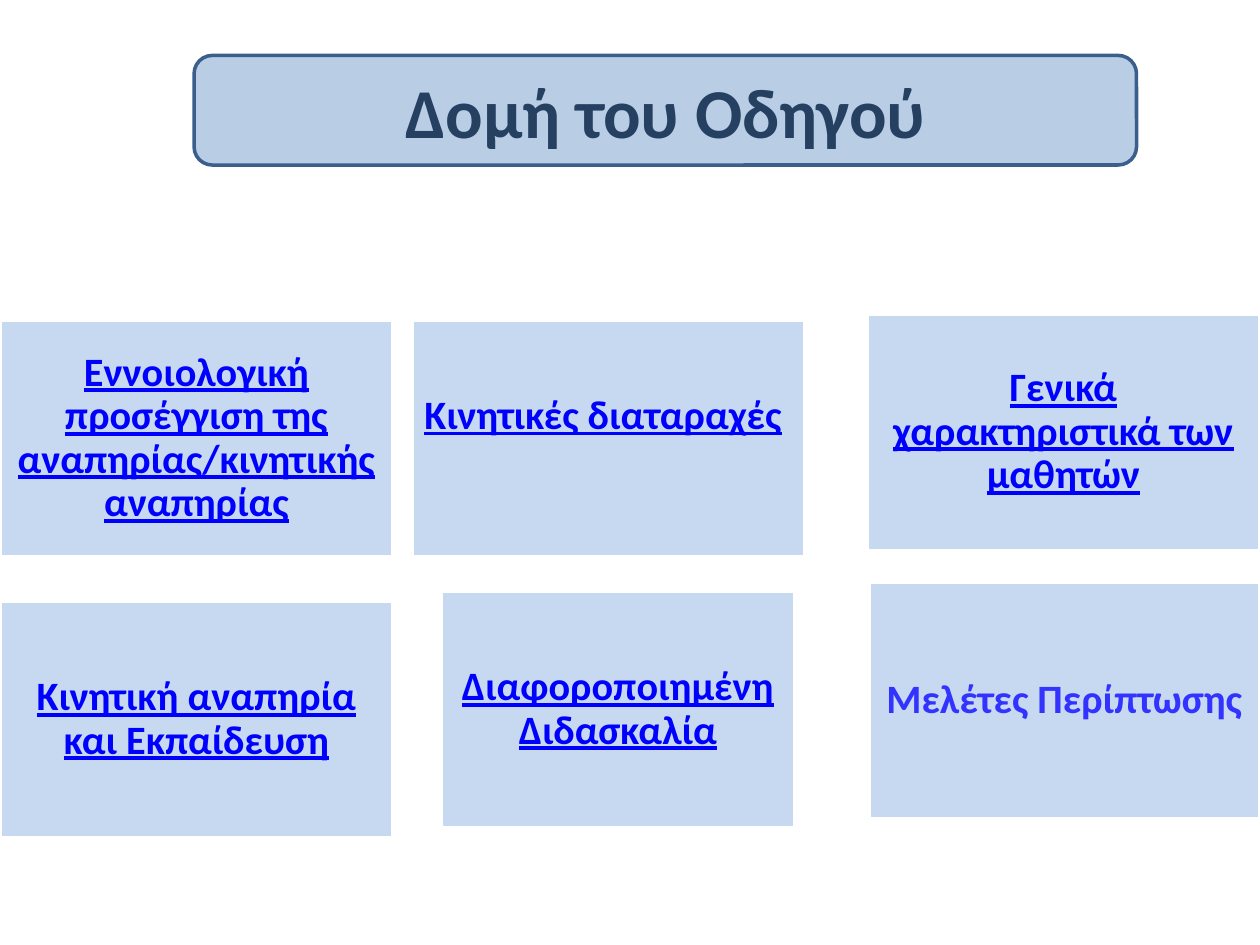
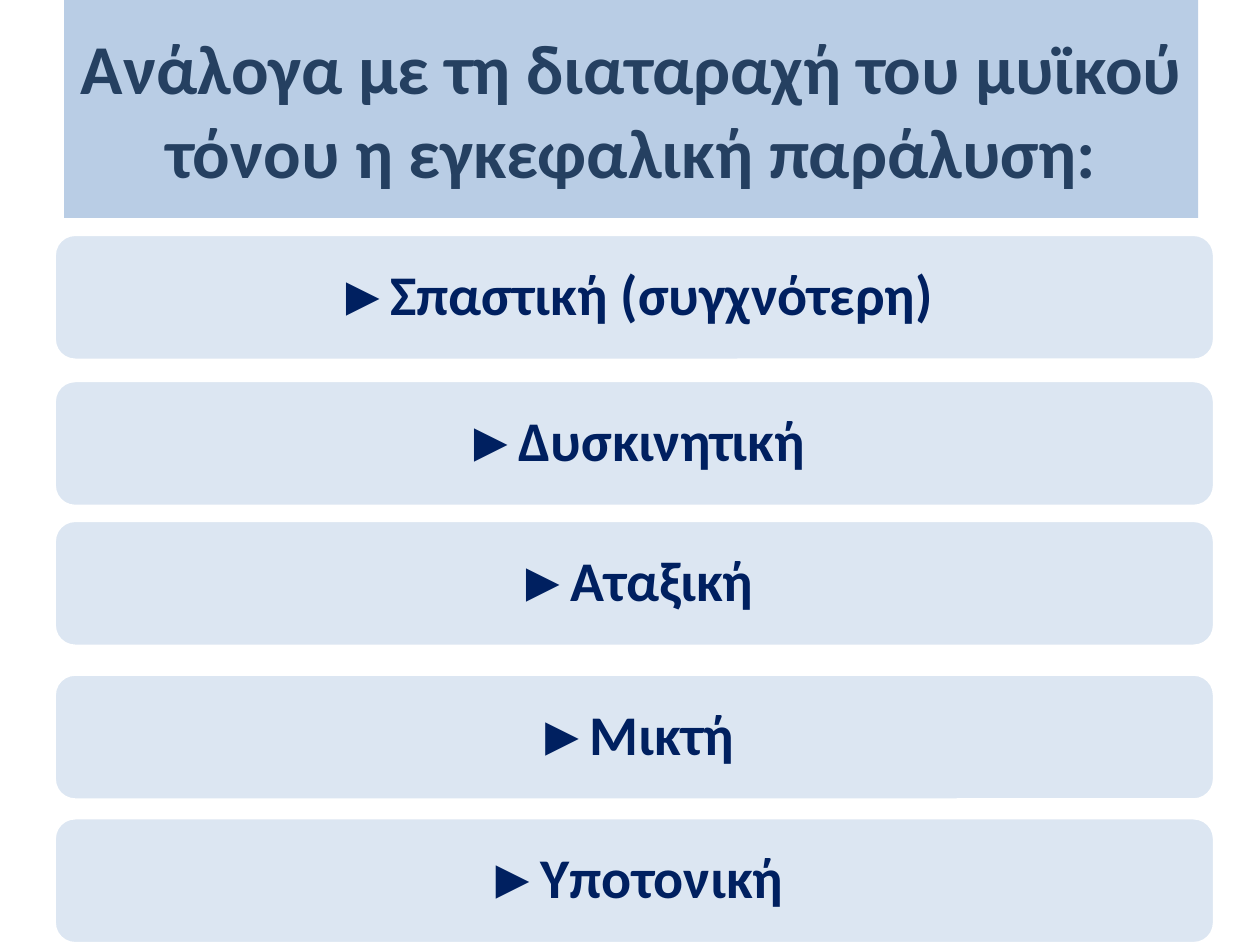
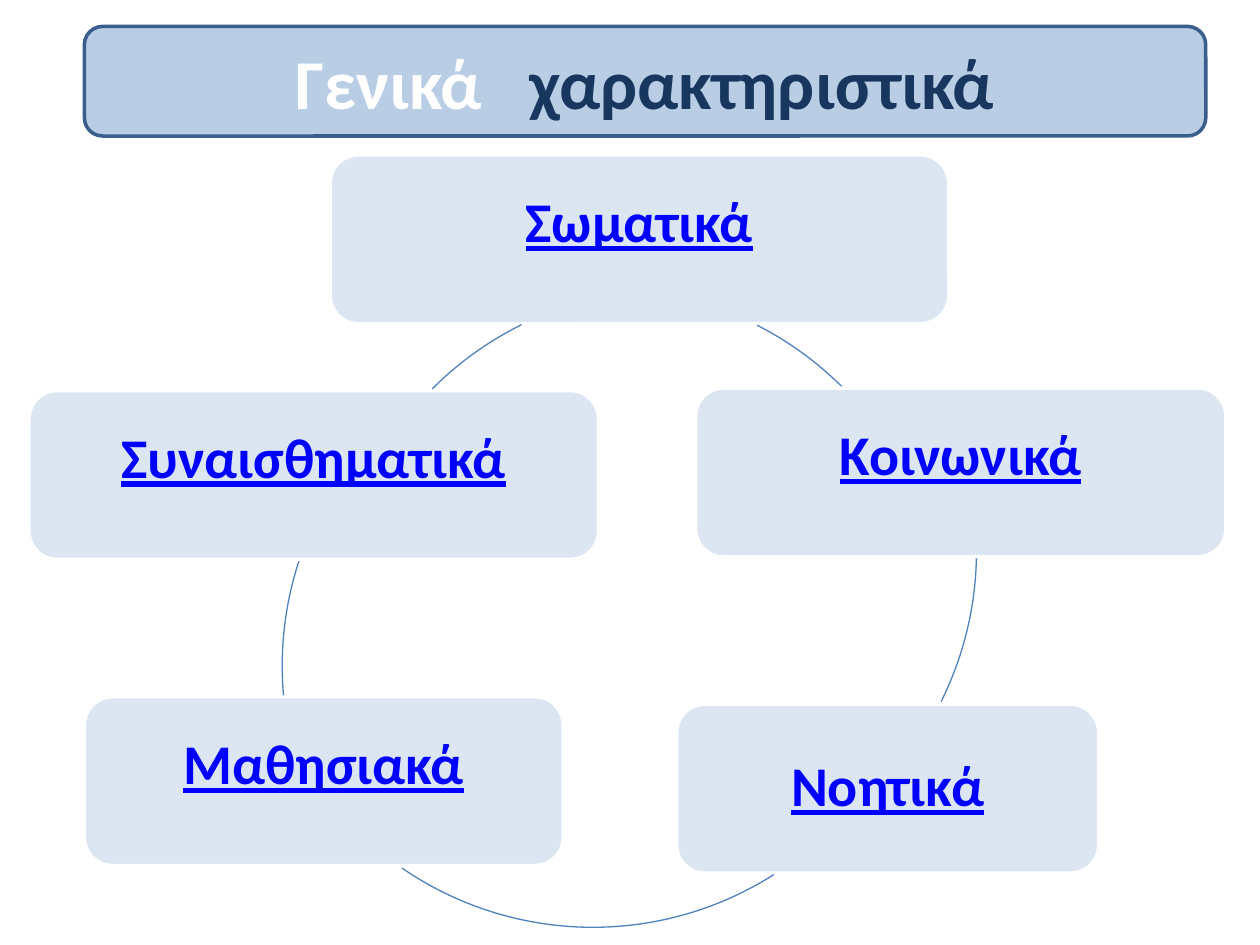
from pptx import Presentation
from pptx.dml.color import RGBColor
from pptx.enum.shapes import MSO_SHAPE
from pptx.enum.text import MSO_ANCHOR, PP_ALIGN
from pptx.util import Emu, Pt

PX = 9144  # EMU per px: 100 px to the inch

COLORS = {
    "white": "FFFFFF",
    "banner": "B9CDE5",
    "banner_edge": "3A5F8C",
    "banner_text": "254061",
    "banner_accent": "17375E",
    "topic": "C6D9F1",
    "category": "DCE6F2",
    "link": "0000FF",
    "plain_topic": "3333FF",
    "type_text": "002060",
    "ring": "4F81BD",
}

# Slide 1: text, box, format that differs from the other topics
TOPICS = [
    ("Κινητικές διαταραχές", (327, 254, 312, 188), {"align": PP_ALIGN.LEFT, "lift": 35}),
    ("Εννοιολογική προσέγγιση της αναπηρίας/κινητικής αναπηρίας", (0, 254, 312, 188), {}),
    ("Γενικά χαρακτηριστικά των μαθητών", (688, 249, 312, 188), {}),
    ("Κινητική αναπηρία και Εκπαίδευση", (0, 477, 312, 188), {}),
    ("Διαφοροποιημένη Διδασκαλία", (350, 469, 281, 188), {}),
    ("Μελέτες Περίπτωσης", (690, 462, 310, 188), {"color": "plain_topic", "underline": False}),
]

# Slide 2: text, top of the bar
PALSY_TYPES = [
    ("Σπαστική (συγχνότερη)", 186),
    ("Δυσκινητική", 302),
    ("Αταξική", 413),
    ("Μικτή", 535),
    ("Υποτονική", 649),
]

# Slide 3: text, left, top, width, lift of the text, line spacing
CATEGORIES = [
    ("Σωματικά", 262, 123, 491, 30, 1.0),
    ("Κοινωνικά", 552, 308, 421, 30, 1.0),
    ("Νοητικά", 537, 559, 335, 0, 0.9),
    ("Μαθησιακά", 67, 553, 380, 30, 1.0),
    ("Συναισθηματικά", 23, 310, 452, 30, 1.0),
]
# Left and top of each ring's circle, start and end in degrees clockwise from the right
RING_DIAMETER = 535
RING_ARCS = [
    (212, 229, 297, 315),
    (240, 170, 1.2, 26.5),
    (203, 201, 57.5, 124.5),
    (224, 261, 175, 198.2),
    (265, 230, 224.9, 243.7),
]


def px(length):
    return Emu(length * PX)


def rgb(name):
    return RGBColor.from_string(COLORS[name])


def add_text(panel, text, *, size, color, font="Calibri", underline=False, tracking=None):
    """Append one bold run to the panel's paragraph."""
    run = panel.text_frame.paragraphs[0].add_run()
    run.text = text
    run.font.name = font
    run.font.size = Pt(size)
    run.font.bold = True
    run.font.underline = underline
    run.font.color.rgb = rgb(color)
    if tracking:
        run._r.get_or_add_rPr().set("spc", str(tracking * 100))


def add_panel(slide, box, fill, *, outline="white", preset=MSO_SHAPE.ROUNDED_RECTANGLE,
              insets=(10, 5), lift=0, align=PP_ALIGN.CENTER, spacing=1.0):
    """Add a filled panel; lift widens the lower inset to raise its text."""
    panel = slide.shapes.add_shape(preset, *map(px, box))
    panel.shadow.inherit = False
    panel.fill.solid()
    panel.fill.fore_color.rgb = rgb(fill)
    if outline:
        panel.line.color.rgb = rgb(outline)
        panel.line.width = Pt(2)
    else:
        panel.line.fill.background()
    frame = panel.text_frame
    frame.word_wrap = True
    frame.vertical_anchor = MSO_ANCHOR.MIDDLE
    side, end = insets
    frame.margin_left = frame.margin_right = px(side)
    frame.margin_top, frame.margin_bottom = px(end), px(end + lift)
    frame.paragraphs[0].alignment = align
    frame.paragraphs[0].line_spacing = spacing
    return panel


def add_banner(slide, box, *parts, **style):
    """Add the title band; each part is a text with its run format."""
    banner = add_panel(slide, box, "banner", **{"outline": "banner_edge", **style})
    for text, run_format in parts:
        add_text(banner, text, **{"size": 40, "color": "banner_text", **run_format})


def add_topic(slide, text, box, *, color="link", underline=True, **layout):
    topic = add_panel(slide, box, "topic", preset=MSO_SHAPE.RECTANGLE,
                      insets=(10, 10), spacing=0.9, **layout)
    add_text(topic, text, size=23, color=color, underline=underline)


def add_palsy_type(slide, text, top):
    bar = add_panel(slide, (43, top, 921, 100), "category", insets=(13, 13), spacing=0.9)
    add_text(bar, "►", size=32, color="type_text", font="Arial")
    add_text(bar, text, size=32, color="type_text")


def add_category(slide, text, left, top, width, lift, spacing):
    category = add_panel(slide, (left, top, width, 134), "category",
                         insets=(13, 13), lift=lift, spacing=spacing)
    add_text(category, text, size=32, color="link", underline=True)


def add_ring_arc(slide, left, top, start, end):
    arc = slide.shapes.add_shape(MSO_SHAPE.ARC, px(left), px(top),
                                 px(RING_DIAMETER), px(RING_DIAMETER))
    arc.shadow.inherit = False
    arc.fill.background()
    arc.line.color.rgb = rgb("ring")
    arc.line.width = Pt(0.75)
    for index, degrees in enumerate((start, end)):
        # Angles are stored in 60000ths of a degree, adjustments in 100000ths
        arc.adjustments[index] = degrees * 0.6


def main():
    deck = Presentation()
    deck.slide_width, deck.slide_height = px(1000), px(750)
    blank = deck.slide_layouts[6]

    # Structure of the guide
    structure = deck.slides.add_slide(blank)
    for text, box, variation in TOPICS:
        add_topic(structure, text, box, **variation)
    add_banner(structure, (154, 44, 748, 87), ("Δομή του Οδηγού", {}))

    # Types of cerebral palsy
    palsy = deck.slides.add_slide(blank)
    add_banner(palsy, (51, 0, 900, 173),
               ("Ανάλογα με τη διαταραχή του μυϊκού τόνου η εγκεφαλική παράλυση:", {}),
               outline=None, preset=MSO_SHAPE.RECTANGLE)
    for text, top in PALSY_TYPES:
        add_palsy_type(palsy, text, top)

    # General characteristics, joined in a ring
    traits = deck.slides.add_slide(blank)
    for category, arc in zip(CATEGORIES, RING_ARCS):
        add_category(traits, *category)
        add_ring_arc(traits, *arc)
    add_banner(traits, (67, 21, 890, 87),
               ("Γενικά", {"color": "white"}),
               (" ", {"tracking": 18}),
               ("χαρακτηριστικά", {"color": "banner_accent"}))

    deck.save("out.pptx")


if __name__ == "__main__":
    main()
